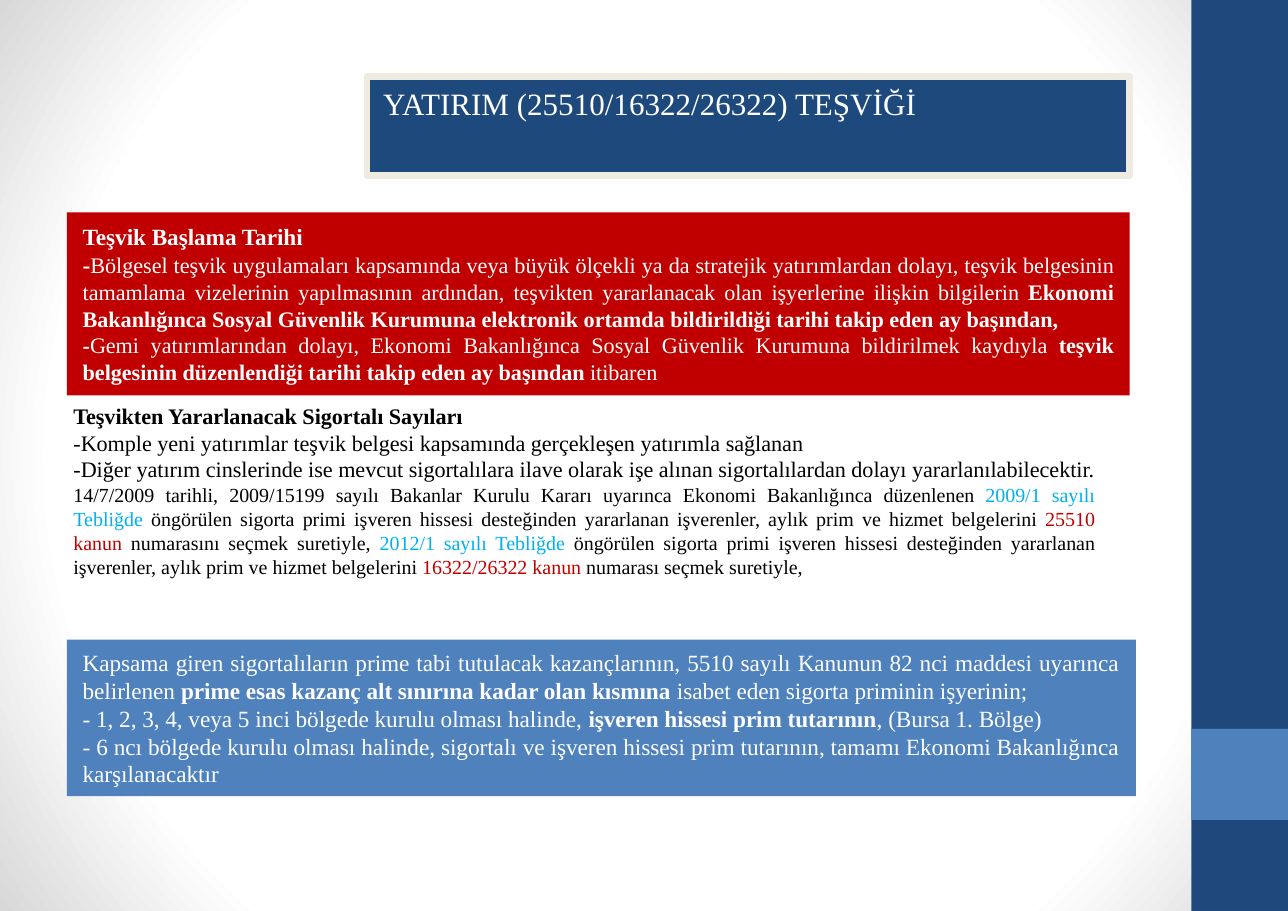
from pptx import Presentation
from pptx.dml.color import RGBColor
from pptx.enum.shapes import MSO_SHAPE
from pptx.enum.text import MSO_ANCHOR, MSO_AUTO_SIZE, PP_ALIGN
from pptx.oxml import parse_xml
from pptx.util import Inches, Pt

RECTANGLE = MSO_SHAPE.RECTANGLE
TOP, MIDDLE = MSO_ANCHOR.TOP, MSO_ANCHOR.MIDDLE
NO_AUTOFIT = MSO_AUTO_SIZE.NONE
LEFT, JUSTIFY = PP_ALIGN.LEFT, PP_ALIGN.JUSTIFY

NAVY = RGBColor(0x1F, 0x49, 0x7D)
TITLE_NAVY = RGBColor(0x1D, 0x49, 0x7D)
BLUE = RGBColor(0x4F, 0x81, 0xBD)
SKY = RGBColor(0x00, 0xB0, 0xF0)
RED = RGBColor(0xC0, 0x00, 0x00)
CREAM = RGBColor(0xEE, 0xEC, 0xE0)
WHITE = RGBColor(0xFF, 0xFF, 0xFF)
BLACK = RGBColor(0x00, 0x00, 0x00)

DRAWING = "http://schemas.openxmlformats.org/drawingml/2006/main"
VIGNETTE = f"""<a:gradFill xmlns:a="{DRAWING}" rotWithShape="1"><a:gsLst>
<a:gs pos="0"><a:srgbClr val="FFFFFF"/></a:gs>
<a:gs pos="75000"><a:srgbClr val="FFFFFF"/></a:gs>
<a:gs pos="100000"><a:srgbClr val="D8D8D8"/></a:gs></a:gsLst>
<a:path path="circle"><a:fillToRect l="50000" t="50000" r="50000" b="50000"/></a:path>
</a:gradFill>"""

BOLD = {"bold": True}
SMALL = {"size": Pt(10)}
SMALL_BOLD = {**SMALL, **BOLD}
NOTE = {"size": Pt(9)}
NOTE_SKY = {**NOTE, "color": SKY}
NOTE_RED = {**NOTE, "color": RED}

START_DATE = [
    [("Teşvik Başlama Tarihi", BOLD)],
    [("-", BOLD),
     ("Bölgesel teşvik uygulamaları kapsamında veya büyük ölçekli ya da stratejik "
      "yatırımlardan dolayı, teşvik belgesinin tamamlama vizelerinin yapılmasının ardından, "
      "teşvikten yararlanacak olan işyerlerine ilişkin bilgilerin ", SMALL),
     ("Ekonomi Bakanlığınca Sosyal Güvenlik Kurumuna elektronik ortamda bildirildiği "
      "tarihi takip eden ay başından,", SMALL_BOLD)],
    [("-", SMALL_BOLD),
     ("Gemi yatırımlarından dolayı, Ekonomi Bakanlığınca Sosyal Güvenlik Kurumuna "
      "bildirilmek kaydıyla ", SMALL),
     ("teşvik belgesinin düzenlendiği tarihi takip eden ay başından ", SMALL_BOLD),
     ("itibaren", SMALL)],
]
SUPPORT = ("öngörülen sigorta primi işveren hissesi desteğinden yararlanan işverenler, "
           "aylık prim ve hizmet belgelerini ")
INSURED_COUNTS = [
    [("Teşvikten Yararlanacak Sigortalı Sayıları", SMALL_BOLD)],
    [("-Komple yeni yatırımlar teşvik belgesi kapsamında gerçekleşen yatırımla sağlanan", SMALL)],
    [("-Diğer yatırım cinslerinde ise mevcut sigortalılara ilave olarak işe alınan "
      "sigortalılardan dolayı yararlanılabilecektir.", SMALL)],
    [("14/7/2009 tarihli, 2009/15199 sayılı Bakanlar Kurulu Kararı uyarınca Ekonomi "
      "Bakanlığınca düzenlenen ", NOTE),
     ("2009/1 sayılı Tebliğde ", NOTE_SKY), (SUPPORT, NOTE),
     ("25510 kanun", NOTE_RED), (" numarasını seçmek suretiyle, ", NOTE),
     ("2012/1 sayılı Tebliğde ", NOTE_SKY), (SUPPORT, NOTE),
     ("16322/26322 kanun ", NOTE_RED), ("numarası seçmek suretiyle,", NOTE)],
]
COVERAGE = [
    [("Kapsama giren sigortalıların prime tabi tutulacak kazançlarının, 5510 sayılı "
      "Kanunun 82 nci maddesi uyarınca belirlenen ", {}),
     ("prime esas kazanç alt sınırına kadar olan kısmına", BOLD),
     (" isabet eden sigorta priminin işyerinin;", {})],
    [("- 1, 2, 3, 4, veya 5 inci bölgede kurulu olması halinde, ", {}),
     ("işveren hissesi prim tutarının", BOLD), (", (Bursa 1. Bölge)", {})],
    [("- 6 ncı bölgede kurulu olması halinde, sigortalı ve işveren hissesi prim tutarının, "
      "tamamı Ekonomi Bakanlığınca karşılanacaktır", {})],
]


class IncentiveSlide:
    """Holds the style and the slide; areas are percentages of the slide's size."""

    font_name = "Times New Roman"
    text_size = Pt(10.5)

    def __init__(self, presentation):
        self.width = presentation.slide_width
        self.height = presentation.slide_height
        self.slide = presentation.slides.add_slide(presentation.slide_layouts[1])

    def background(self, gradient):
        fill = self.slide.background.fill
        fill.solid()
        properties = self.slide.element.cSld.bg.bgPr
        properties.replace(properties[0], parse_xml(gradient))

    def place(self, area):
        left, top, width, height = area
        return (round(self.width * left / 100), round(self.height * top / 100),
                round(self.width * width / 100), round(self.height * height / 100))

    def move(self, shape, area):
        shape.left, shape.top, shape.width, shape.height = self.place(area)

    def add_text(self, shape, paragraphs, color, anchor=TOP, alignment=JUSTIFY):
        frame = shape.text_frame
        frame_format = {"word_wrap": True, "auto_size": NO_AUTOFIT, "vertical_anchor": anchor}
        for name, value in frame_format.items():
            setattr(frame, name, value)
        for index, runs in enumerate(paragraphs):
            paragraph = frame.add_paragraph() if index else frame.paragraphs[0]
            paragraph.alignment = alignment
            paragraph.space_before = Pt(0)
            if shape.is_placeholder:
                properties = paragraph._p.get_or_add_pPr()
                properties.set("marL", "0")
                properties.set("indent", "0")
                properties.append(parse_xml(f'<a:buNone xmlns:a="{DRAWING}"/>'))
            for text, changes in runs:
                run = paragraph.add_run()
                run.text = text
                style = {"name": self.font_name, "size": self.text_size, "bold": False,
                         "color": color, **changes}
                run.font.color.rgb = style.pop("color")
                for name, value in style.items():
                    setattr(run.font, name, value)

    def title(self, text, area, fill, border):
        shape = self.slide.shapes.title
        self.move(shape, area)
        shape.fill.solid()
        shape.fill.fore_color.rgb = fill
        shape.line.color.rgb = border
        shape.line.width = Pt(3)
        self.add_text(shape, [[(text, {"size": Pt(14)})]], WHITE, alignment=LEFT)

    def body(self, paragraphs, area):
        shape = self.slide.placeholders[1]
        self.move(shape, area)
        self.add_text(shape, paragraphs, BLACK)

    def panel(self, area, fill, paragraphs=()):
        shape = self.slide.shapes.add_shape(RECTANGLE, *self.place(area))
        shape.shadow.inherit = False
        shape.fill.solid()
        shape.fill.fore_color.rgb = fill
        shape.line.fill.background()
        if paragraphs:
            self.add_text(shape, paragraphs, WHITE, MIDDLE)


def main():
    presentation = Presentation()
    presentation.slide_width = Inches(8.07)
    presentation.slide_height = Inches(5.71)
    slide = IncentiveSlide(presentation)
    slide.background(VIGNETTE)
    slide.panel((92.5, 0, 7.5, 100), NAVY)
    slide.panel((92.5, 80, 7.5, 10), BLUE)
    slide.title("YATIRIM (25510/16322/26322) TEŞVİĞİ", (28.5, 8.4, 59.2, 10.9),
                TITLE_NAVY, CREAM)
    slide.panel((5.2, 70.2, 83, 17.2), BLUE, COVERAGE)
    slide.panel((5.2, 23.3, 82.5, 20.1), RED, START_DATE)
    slide.body(INSURED_COUNTS, (4.46, 43.3, 81.8, 24.2))
    presentation.save("out.pptx")


if __name__ == "__main__":
    main()
